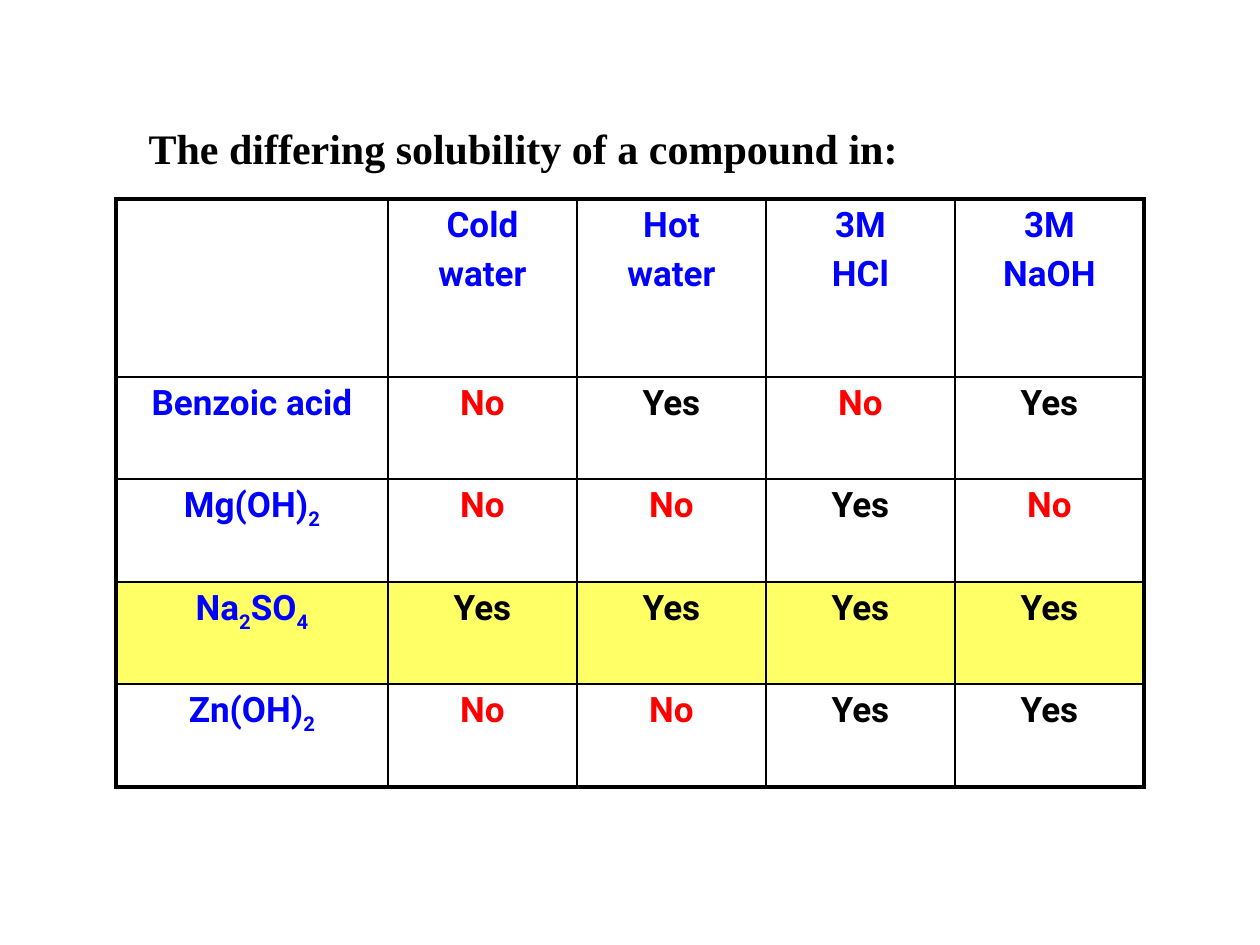
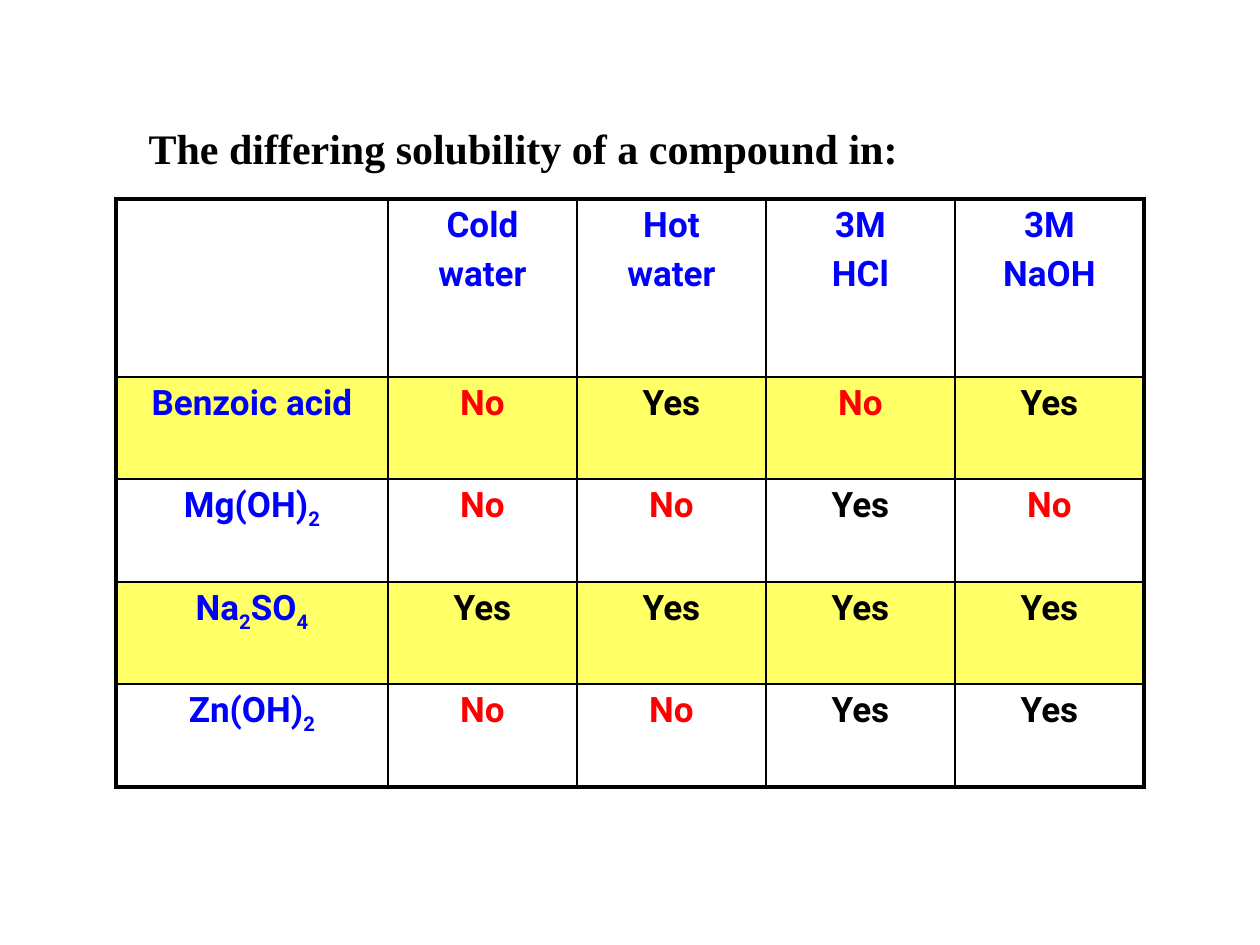
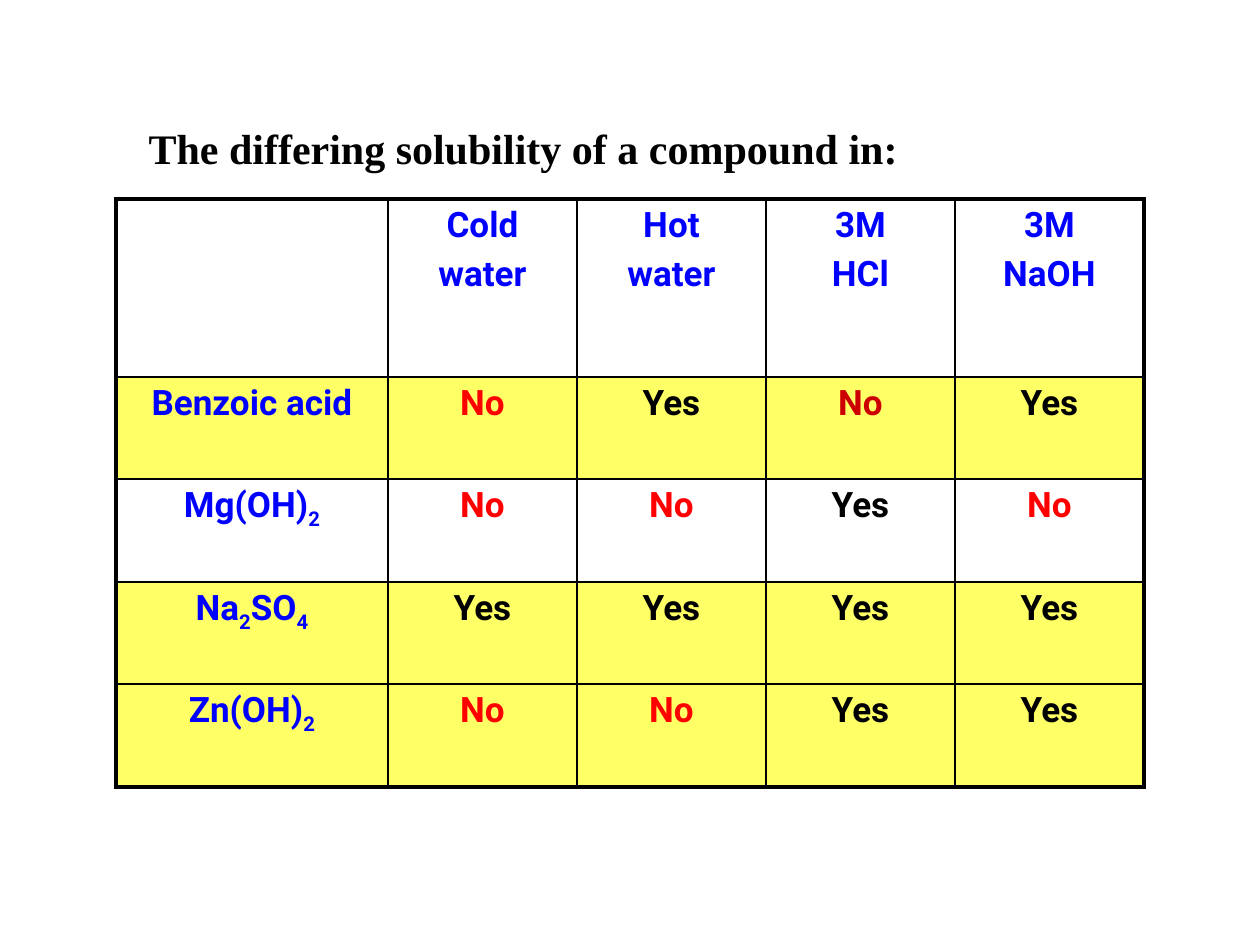
"""Build three solubility table slides that highlight more compounds step by step."""
from itertools import groupby

from lxml import etree
from pptx import Presentation
from pptx.dml.color import RGBColor
from pptx.enum.text import MSO_ANCHOR, MSO_AUTO_SIZE, PP_ALIGN
from pptx.oxml.ns import qn
from pptx.util import Emu, Pt

CENTER, LEFT = PP_ALIGN.CENTER, PP_ALIGN.LEFT
TOP = MSO_ANCHOR.TOP
FIT_SHAPE = MSO_AUTO_SIZE.SHAPE_TO_FIT_TEXT

TITLE = "The differing solubility of a compound in:"
SOLVENTS = ["", "Cold\nwater", "Hot\nwater", "3M\nHCl", "3M\nNaOH"]
SOLUBILITY = [
    ["Benzoic acid", "No", "Yes", "No", "Yes"],
    ["Mg(OH)2", "No", "No", "Yes", "No"],
    ["Na2SO4", "Yes", "Yes", "Yes", "Yes"],
    ["Zn(OH)2", "No", "No", "Yes", "Yes"],
]
ROWS = [SOLVENTS] + SOLUBILITY
SLIDES = [
    {"highlight": {3}, "dark_red": set()},
    {"highlight": {1, 3}, "dark_red": set()},
    {"highlight": {1, 3, 4}, "dark_red": {(1, 3)}},
]

BLACK, BLUE, RED, DARK_RED, YELLOW = "000000", "0000FF", "FF0000", "CC0000", "FFFF66"
ANSWER_COLORS = {"Yes": BLACK, "No": RED}
TITLE_FONT, TABLE_FONT = "Times New Roman", "Roboto"
INNER, OUTER = Pt(1), Pt(2.25)

PX_PER_INCH = 126
SLIDE_SIZE = (1260, 945)
TITLE_BOX = (136, 116, 775, 63)
TABLE_AT = (116, 199)
COL_WIDTHS = [272] + [189] * 4
ROW_HEIGHTS = [178] + [102, 103] * 2


def px(n):
    return Emu(round(n * 914400 / PX_PER_INCH))


def rgb(color):
    return RGBColor.from_string(color)


def style(p, font, size, color, align):
    p.alignment = align
    p.font.name, p.font.size, p.font.bold = font, Pt(size), True
    p.font.color.rgb = rgb(color)


def add_title(s):
    title = s.shapes.title
    title.left, title.top, title.width, title.height = map(px, TITLE_BOX)
    tf = title.text_frame
    tf.text = TITLE
    tf.word_wrap, tf.auto_size, tf.vertical_anchor = False, FIT_SHAPE, TOP
    style(tf.paragraphs[0], TITLE_FONT, 24, BLACK, LEFT)


def set_borders(cell, row, col):
    edges = {
        "L": col == 0,
        "R": col == len(COL_WIDTHS) - 1,
        "T": row == 0,
        "B": row == len(ROW_HEIGHTS) - 1,
    }
    tcPr = cell._tc.get_or_add_tcPr()
    for side, is_outer in edges.items():
        ln = etree.SubElement(tcPr, qn(f"a:ln{side}"), w=str(OUTER if is_outer else INNER))
        fill = etree.SubElement(ln, qn("a:solidFill"))
        etree.SubElement(fill, qn("a:srgbClr"), val=BLACK)


def add_formula(p, formula):
    for is_digit, chars in groupby(formula, str.isdigit):
        r = p.add_run()
        r.text = "".join(chars)
        if is_digit:
            r._r.get_or_add_rPr().set("baseline", "-25000")


def fill_cell(cell, text, is_compound, color):
    tf = cell.text_frame
    if is_compound:
        add_formula(tf.paragraphs[0], text)
    else:
        tf.text = text
    for p in tf.paragraphs:
        style(p, TABLE_FONT, 20, color, CENTER)
        p.space_before = Pt(4)


def add_solubility_table(s, highlight, dark_red):
    size = (sum(COL_WIDTHS), sum(ROW_HEIGHTS))
    frame = s.shapes.add_table(len(ROWS), len(SOLVENTS), *map(px, TABLE_AT + size))
    table = frame.table
    table.first_row = table.horz_banding = False
    for column, width in zip(table.columns, COL_WIDTHS):
        column.width = px(width)
    for i, (row, height) in enumerate(zip(ROWS, ROW_HEIGHTS)):
        table.rows[i].height = px(height)
        for j, text in enumerate(row):
            cell = table.cell(i, j)
            color = DARK_RED if (i, j) in dark_red else ANSWER_COLORS.get(text, BLUE)
            fill_cell(cell, text, i > 0 and j == 0, color)
            set_borders(cell, i, j)
            if i in highlight:
                cell.fill.solid()
                cell.fill.fore_color.rgb = rgb(YELLOW)
            else:
                cell.fill.background()


def main():
    prs = Presentation()
    prs.slide_width, prs.slide_height = map(px, SLIDE_SIZE)
    title_only = prs.slide_layouts[5]
    for content in SLIDES:
        s = prs.slides.add_slide(title_only)
        add_solubility_table(s, **content)
        add_title(s)
    prs.save("out.pptx")


if __name__ == "__main__":
    main()
